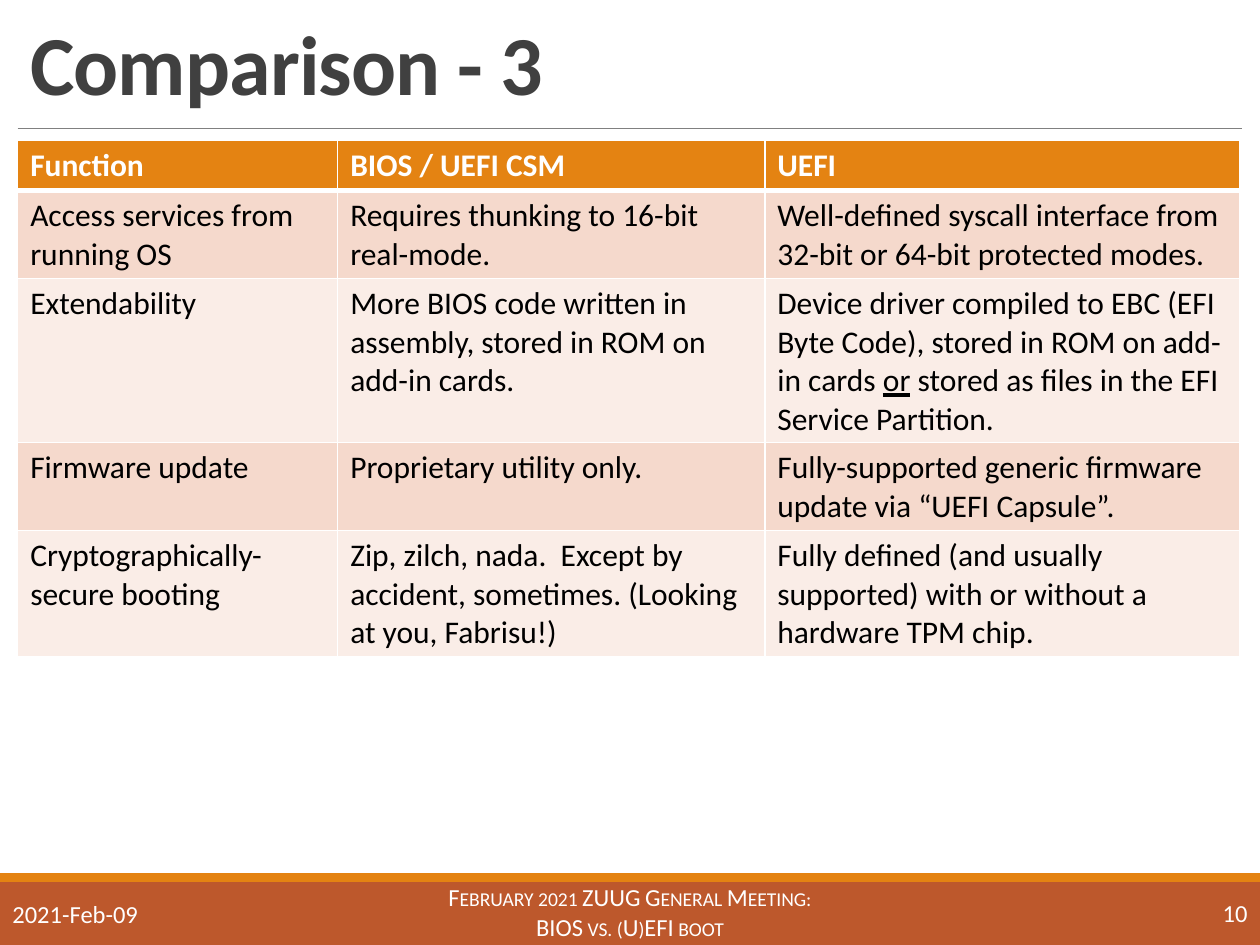
from lxml import etree
from pptx import Presentation
from pptx.dml.color import RGBColor
from pptx.enum.shapes import MSO_CONNECTOR, MSO_SHAPE
from pptx.enum.text import MSO_ANCHOR as Anchor, PP_ALIGN as Align
from pptx.oxml.ns import qn
from pptx.util import Inches, Pt

FONT = "Calibri"
WHITE, BLACK, TITLE_GRAY, RULE_GRAY = "FFFFFF", "000000", "404040", "808080"
ORANGE, RUST = "E48312", "BD582C"
BANDS = ["F5D9CC", "FAEDE7"]
LINE_HEIGHT, CELL_PADDING = 0.3, 0.1

COLUMN_WIDTHS = [2.54, 3.39, 3.77]
HEADER = ["Function", "BIOS / UEFI CSM", "UEFI"]
# Each row: number of text lines, then its cells; a list is a run sequence
# whose odd members are underlined.
ROWS = [
    (2, ["Access services from running OS",
         "Requires thunking to 16-bit real-mode.",
         "Well-defined syscall interface from 32-bit or 64-bit protected modes."]),
    (4, ["Extendability",
         "More BIOS code written in assembly, stored in ROM on add-in cards.",
         ["Device driver compiled to EBC (EFI Byte Code), stored in ROM on add-in cards ",
          "or", " stored as files in the EFI Service Partition."]]),
    (2, ["Firmware update",
         "Proprietary utility only.",
         "Fully-supported generic firmware update via “UEFI Capsule”."]),
    (3, ["Cryptographically-secure booting",
         "Zip, zilch, nada.  Except by accident, sometimes. (Looking at you, Fabrisu!)",
         "Fully defined (and usually supported) with or without a hardware TPM chip."]),
]


def color(hex_string):
    return RGBColor.from_string(hex_string)


def style_font(font, size, hex_string, bold=False):
    font.name, font.size, font.bold = FONT, Pt(size), bold
    font.color.rgb = color(hex_string)


def add_text(slide, box, text, size, hex_string, bold=False,
             align=Align.LEFT, anchor=Anchor.MIDDLE, **run_attributes):
    """Add a one-paragraph text box; extra keywords become run attributes."""
    shape = slide.shapes.add_textbox(*map(Inches, box))
    frame = shape.text_frame
    frame.word_wrap = True
    frame.vertical_anchor = anchor
    paragraph = frame.paragraphs[0]
    paragraph.text = text
    paragraph.alignment = align
    style_font(paragraph.font, size, hex_string, bold)
    for run in paragraph.runs:
        for name, value in run_attributes.items():
            run._r.get_or_add_rPr().set(name, value)
    return paragraph


def add_bar(slide, box, hex_string):
    bar = slide.shapes.add_shape(MSO_SHAPE.RECTANGLE, *map(Inches, box))
    bar.shadow.inherit = False
    bar.fill.solid()
    bar.fill.fore_color.rgb = color(hex_string)
    bar.line.fill.background()


def add_title(slide, box, text):
    left, top, width, height = box
    title = add_text(slide, box, text, 48, TITLE_GRAY, bold=True,
                     anchor=Anchor.BOTTOM, spc="-50")
    title.line_spacing = 0.85
    rule_top = Inches(top + height + 0.08)
    rule = slide.shapes.add_connector(
        MSO_CONNECTOR.STRAIGHT, Inches(left), rule_top, Inches(10 - left), rule_top)
    rule.line.color.rgb = color(RULE_GRAY)
    rule.line.width = Pt(0.5)
    etree.SubElement(rule._element.spPr, qn("a:effectLst"))


def set_borders(cell, widths):
    properties = cell._tc.get_or_add_tcPr()
    for side, width in widths.items():
        line = etree.SubElement(properties, qn(f"a:ln{side}"), w=str(Pt(width)))
        fill = etree.SubElement(line, qn("a:solidFill"))
        etree.SubElement(fill, qn("a:srgbClr"), val=WHITE)


def fill_cell(cell, content, fill, text_color, bold, borders):
    set_borders(cell, borders)
    cell.fill.solid()
    cell.fill.fore_color.rgb = color(fill)
    paragraph = cell.text_frame.paragraphs[0]
    style_font(paragraph.font, 18, text_color, bold)
    parts = [content] if isinstance(content, str) else content
    for index, part in enumerate(parts):
        run = paragraph.add_run()
        run.text = part
        if index % 2:
            run.font.underline = True


def add_comparison_table(slide, left, top):
    rows = [(1, HEADER)] + ROWS
    heights = [CELL_PADDING + LINE_HEIGHT * lines for lines, _ in rows]
    table = slide.shapes.add_table(
        len(rows), len(HEADER), Inches(left), Inches(top),
        Inches(sum(COLUMN_WIDTHS)), Inches(sum(heights))).table
    for column, width in zip(table.columns, COLUMN_WIDTHS):
        column.width = Inches(width)
    for index, (_, contents) in enumerate(rows):
        table.rows[index].height = Inches(heights[index])
        is_header = index == 0
        fill = ORANGE if is_header else BANDS[(index - 1) % 2]
        borders = {"L": 1, "R": 1, "T": 3 if index == 1 else 1, "B": 3 if is_header else 1}
        for cell, content in zip(table.rows[index].cells, contents):
            fill_cell(cell, content, fill, WHITE if is_header else BLACK, is_header, borders)


def add_footer(slide, box):
    left, top, width, height = box
    add_bar(slide, box, RUST)
    add_bar(slide, (left, top - 0.07, width, 0.07), ORANGE)
    add_text(slide, (left, top + 0.05, 2.03, 0.4), "2021-Feb-09", 14, WHITE)
    add_text(slide, (left + 3.02, top, 3.96, 0.47),
             "February 2021 ZUUG General Meeting:\vBIOS vs. (U)EFI boot",
             14, WHITE, align=Align.CENTER, cap="small")
    add_text(slide, (left + width - 1.08, top + 0.04, 1.08, 0.4), "10", 14, WHITE,
             align=Align.RIGHT)


def main():
    presentation = Presentation()
    presentation.slide_width, presentation.slide_height = Inches(10), Inches(7.5)
    slide = presentation.slides.add_slide(presentation.slide_layouts[6])
    add_footer(slide, (0, 7, 10, 0.5))
    add_title(slide, (0.14, 0, 9.7, 0.94), "Comparison - 3")
    add_comparison_table(slide, 0.14, 1.11)
    presentation.save("out.pptx")


if __name__ == "__main__":
    main()
